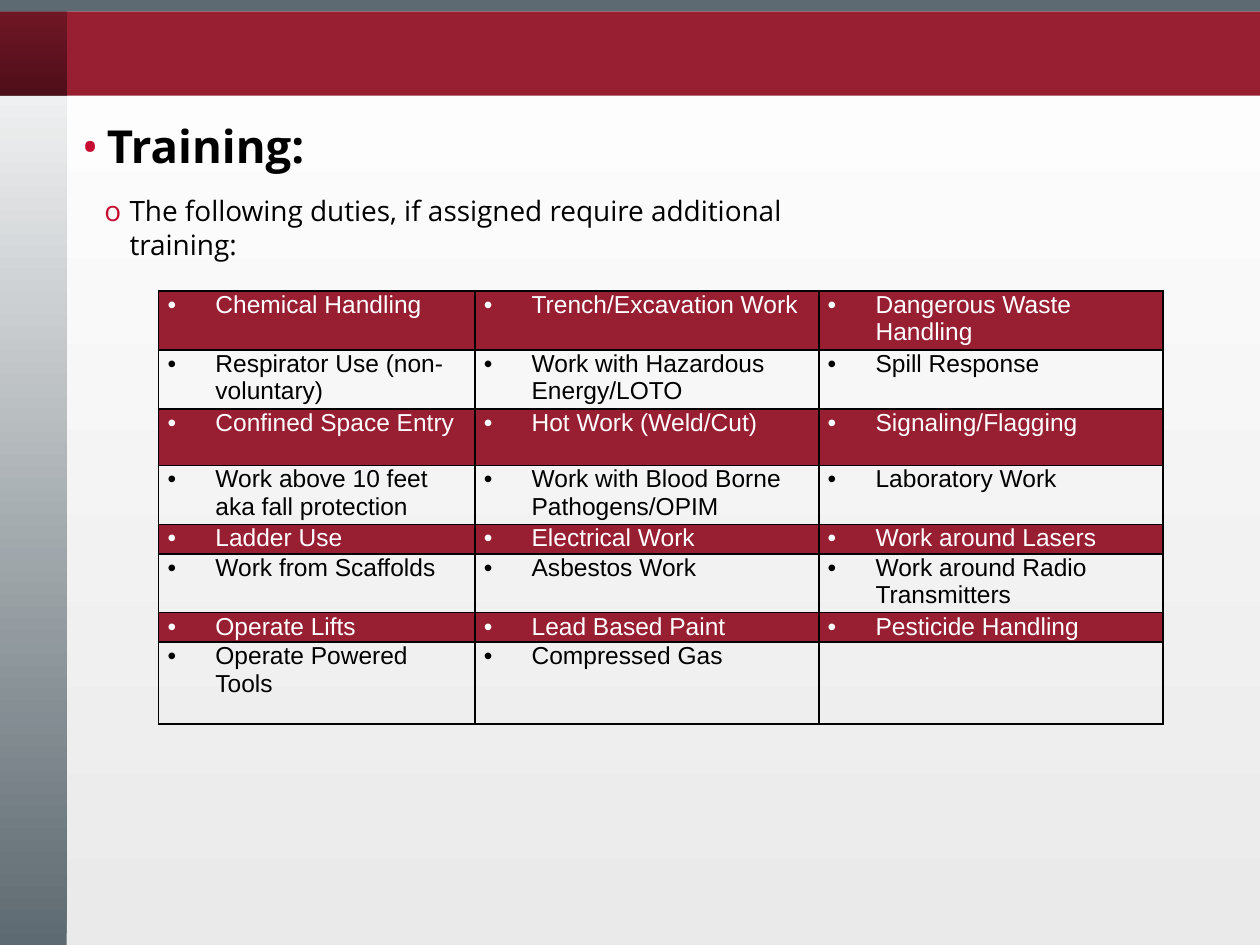
import pptx
import pptx.chart.data
import pptx.dml.color
import pptx.enum.shapes
import pptx.oxml
import pptx.oxml.ns
import pptx.util
from lxml import etree

Inches = pptx.util.Inches
Pt = pptx.util.Pt
RGBColor = pptx.dml.color.RGBColor
qn = pptx.oxml.ns.qn

CRIMSON = RGBColor(0x98, 0x1E, 0x32)
BULLET_RED = RGBColor(0xC6, 0x0C, 0x30)
SLATE = RGBColor(0x5E, 0x6A, 0x71)
PALE = RGBColor(0xEA, 0xEA, 0xEA)
WHITE = RGBColor(0xFF, 0xFF, 0xFF)
BLACK = RGBColor(0, 0, 0)

OUTLINE = [
    ("Training:", "•", 26, True, 0.2, 0),
    ("The following duties, if assigned require additional training:", "o", 16, False, 0.38, 12),
]
DUTIES = [
    ("Chemical Handling", "Trench/Excavation Work", "Dangerous Waste Handling"),
    ("Respirator Use (non-voluntary)", "Work with Hazardous Energy/LOTO", "Spill Response"),
    ("Confined Space Entry", "Hot Work (Weld/Cut)", "Signaling/Flagging"),
    ("Work above 10 feet aka fall protection", "Work with Blood Borne Pathogens/OPIM", "Laboratory Work"),
    ("Ladder Use", "Electrical Work", "Work around Lasers"),
    ("Work from Scaffolds", "Asbestos Work", "Work around Radio Transmitters"),
    ("Operate Lifts", "Lead Based Paint", "Pesticide Handling"),
    ("Operate Powered Tools", "Compressed Gas", ""),
]
COLUMN_WIDTHS = (2.51, 2.73, 2.73)
ROW_HEIGHTS = (0.45, 0.45, 0.45, 0.45, 0.23, 0.45, 0.23, 0.65)


def fill_upward(fill, bottom, top, alphas=()):
    fill.gradient()
    fill.gradient_angle = 90
    for stop, color in zip(fill.gradient_stops, (bottom, top)):
        stop.color.rgb = color
    colors = fill._xPr.iter(qn("a:srgbClr"))
    for color, alpha in zip(colors, alphas):
        etree.SubElement(color, qn("a:alpha"), val=str(alpha * 1000))


def add_band(slide, left, top, width, height):
    band = slide.shapes.add_shape(
        pptx.enum.shapes.MSO_SHAPE.RECTANGLE,
        Inches(left), Inches(top), Inches(width), Inches(height))
    band.shadow.inherit = False
    band.line.fill.background()
    return band.fill


def write_bullet(paragraph, text, bullet, font, size, color, margin, indent, bullet_color):
    paragraph.text = text
    properties = paragraph._p.get_or_add_pPr()
    properties.set("marL", str(Inches(margin)))
    properties.set("indent", str(-Inches(indent)))
    holder = etree.SubElement(properties, qn("a:buClr"))
    etree.SubElement(holder, qn("a:srgbClr"), val=str(bullet_color))
    etree.SubElement(properties, qn("a:buFont"), typeface=font)
    etree.SubElement(properties, qn("a:buChar"), char=bullet)
    paragraph.font.name = font
    paragraph.font.size = Pt(size)
    paragraph.font.color.rgb = color


def add_borders(cell):
    properties = cell._tc.get_or_add_tcPr()
    for position, side in enumerate(("a:lnL", "a:lnR", "a:lnT", "a:lnB")):
        line = etree.Element(qn(side), w=str(Pt(1)))
        solid = etree.SubElement(line, qn("a:solidFill"))
        etree.SubElement(solid, qn("a:srgbClr"), val=str(BLACK))
        properties.insert(position, line)


def add_frame(slide):
    fill_upward(slide.background.fill, PALE, WHITE)
    fill_upward(add_band(slide, 0, 0, 0.53, 7.5), SLATE, WHITE)
    for box, color in (((0, 0.09, 10, 0.67), CRIMSON), ((-0.02, 0, 10.02, 0.09), SLATE)):
        fill = add_band(slide, *box)
        fill.solid()
        fill.fore_color.rgb = color
    fill_upward(add_band(slide, -0.02, 0.09, 0.55, 0.67), BLACK, BLACK, (50, 25))


def add_outline(slide):
    frame = slide.shapes.add_textbox(Inches(0.55), Inches(0.89), Inches(5.97), Inches(1.85)).text_frame
    frame.word_wrap = True
    for index, (text, bullet, size, bold, margin, space) in enumerate(OUTLINE):
        paragraph = frame.add_paragraph() if index else frame.paragraphs[0]
        write_bullet(paragraph, text, bullet, "Open Sans", size, BLACK, margin, 0.2, BULLET_RED)
        paragraph.font.bold = bold
        paragraph.space_before = Pt(space)


def add_duties(slide):
    table = slide.shapes.add_table(
        len(DUTIES), len(COLUMN_WIDTHS), Inches(1.26), Inches(2.31),
        Inches(sum(COLUMN_WIDTHS)), Inches(sum(ROW_HEIGHTS))).table
    table.first_row = table.horz_banding = False
    for column, width in zip(table.columns, COLUMN_WIDTHS):
        column.width = Inches(width)
    for index, (row, height, duties) in enumerate(zip(table.rows, ROW_HEIGHTS, DUTIES)):
        row.height = Inches(height)
        shaded = index % 2 == 0
        color = WHITE if shaded else BLACK
        for cell, duty in zip(row.cells, duties):
            cell.margin_left = cell.margin_right = Inches(0.07)
            cell.margin_top = cell.margin_bottom = 0
            if shaded:
                cell.fill.solid()
                cell.fill.fore_color.rgb = CRIMSON
            else:
                cell.fill.background()
            add_borders(cell)
            if duty:
                write_bullet(cell.text_frame.paragraphs[0], duty, "•", "Arial", 14, color, 0.38, 0.38, color)


def main():
    presentation = pptx.Presentation()
    presentation.slide_width = Inches(10)
    presentation.slide_height = Inches(7.5)
    slide = presentation.slides.add_slide(presentation.slide_layouts[6])
    add_frame(slide)
    add_outline(slide)
    add_duties(slide)
    presentation.save("out.pptx")


if __name__ == "__main__":
    main()
